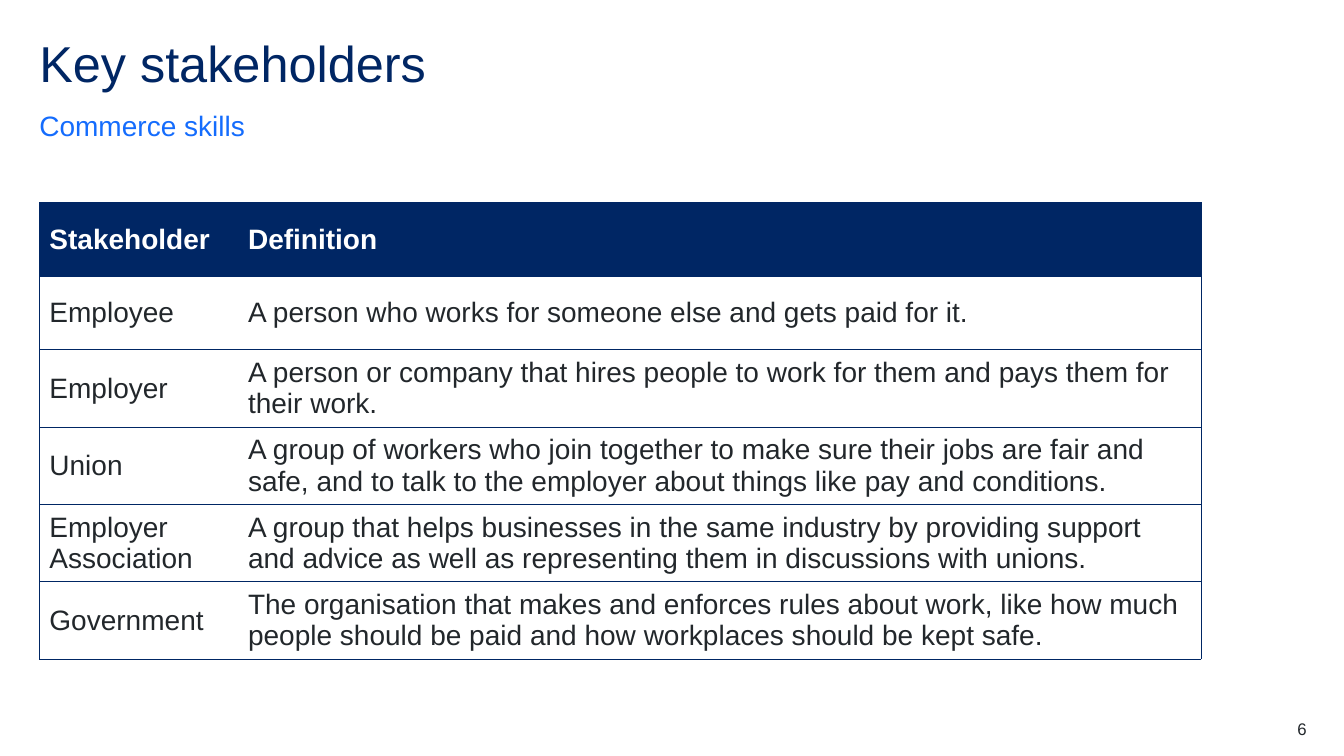
from pptx import Presentation
from pptx.dml.color import RGBColor
from pptx.enum.text import MSO_ANCHOR as Anchor, PP_ALIGN as Align
from pptx.oxml.ns import qn
from pptx.util import Inches, Pt
from lxml.etree import SubElement

NAVY, BLUE, INK, WHITE = "002664", "146CFD", "22272B", "FFFFFF"
LEFT = 0.39
COLUMN_WIDTHS = [1.97, 9.55]
ROW_HEIGHT = 0.73
STAKEHOLDERS = [
    ("Stakeholder", "Definition"),
    ("Employee", "A person who works for someone else and gets paid for it."),
    ("Employer", "A person or company that hires people to work for them "
                 "and pays them for their work."),
    ("Union", "A group of workers who join together to make sure their jobs are fair and "
              "safe, and to talk to the employer about things like pay and conditions."),
    ("Employer Association", "A group that helps businesses in the same industry by providing "
                             "support and advice as well as representing them in discussions "
                             "with unions."),
    ("Government", "The organisation that makes and enforces rules about work, like how much "
                   "people should be paid and how workplaces should be kept safe."),
]


def color(hex_code):
    return RGBColor.from_string(hex_code)


def write(frame, text, size=20, fill=INK, bold=False, align=Align.LEFT,
          line_spacing=None, space_after=None):
    para = frame.paragraphs[0]
    para.alignment = align
    if line_spacing:
        para.line_spacing = line_spacing
    if space_after is not None:
        para.space_after = Pt(space_after)
    span = para.add_run()
    span.text = text
    span.font.name = "Arial"
    span.font.size = Pt(size)
    span.font.bold = bold
    span.font.color.rgb = color(fill)


def add_text(page, text, left, top, width, height, anchor=Anchor.TOP, **style):
    box = page.shapes.add_textbox(Inches(left), Inches(top), Inches(width), Inches(height))
    frame = box.text_frame
    frame.word_wrap = True
    frame.vertical_anchor = anchor
    frame.margin_left = frame.margin_right = frame.margin_top = frame.margin_bottom = 0
    write(frame, text, **style)


def set_borders(cell, visible_sides):
    properties = cell._tc.get_or_add_tcPr()
    for position, side in enumerate(("L", "R", "T", "B")):
        line = properties.makeelement(qn(f"a:ln{side}"), {"w": str(Pt(0.5))})
        if side in visible_sides:
            solid = SubElement(line, qn("a:solidFill"))
            SubElement(solid, qn("a:srgbClr"), val=NAVY)
        else:
            SubElement(line, qn("a:noFill"))
        properties.insert(position, line)


def add_stakeholder_table(page, left, top):
    rows, columns = len(STAKEHOLDERS), len(COLUMN_WIDTHS)
    table = page.shapes.add_table(
        rows, columns, Inches(left), Inches(top),
        Inches(sum(COLUMN_WIDTHS)), Inches(rows * ROW_HEIGHT)).table
    for column, width in zip(table.columns, COLUMN_WIDTHS):
        column.width = Inches(width)
    for row_index, texts in enumerate(STAKEHOLDERS):
        table.rows[row_index].height = Inches(ROW_HEIGHT)
        header = row_index == 0
        for column_index, text in enumerate(texts):
            cell = table.cell(row_index, column_index)
            cell.vertical_anchor = Anchor.MIDDLE
            cell.fill.solid()
            cell.fill.fore_color.rgb = color(NAVY if header else WHITE)
            write(cell.text_frame, text, fill=WHITE if header else INK, bold=header)
            # Horizontal rules and outer frame, no line between columns
            set_borders(cell, "TBL" if column_index == 0 else "TBR")


def main():
    deck = Presentation()
    deck.slide_width, deck.slide_height = Inches(13.33), Inches(7.5)
    page = deck.slides.add_slide(deck.slide_layouts[6])

    # Heading
    add_text(page, "Key stakeholders", LEFT, 0.39, 12.56, 0.6,
             size=36, fill=NAVY, line_spacing=0.9)
    add_text(page, "Commerce skills", LEFT, 1.07, 12.56, 0.34, anchor=Anchor.BOTTOM,
             fill=BLUE, line_spacing=1.5, space_after=12)

    # Definitions
    add_stakeholder_table(page, LEFT, 2.01)

    # Page number
    add_text(page, "6", 12.17, 7.13, 0.79, 0.2, size=12, align=Align.RIGHT)

    deck.save("out.pptx")


if __name__ == "__main__":
    main()
